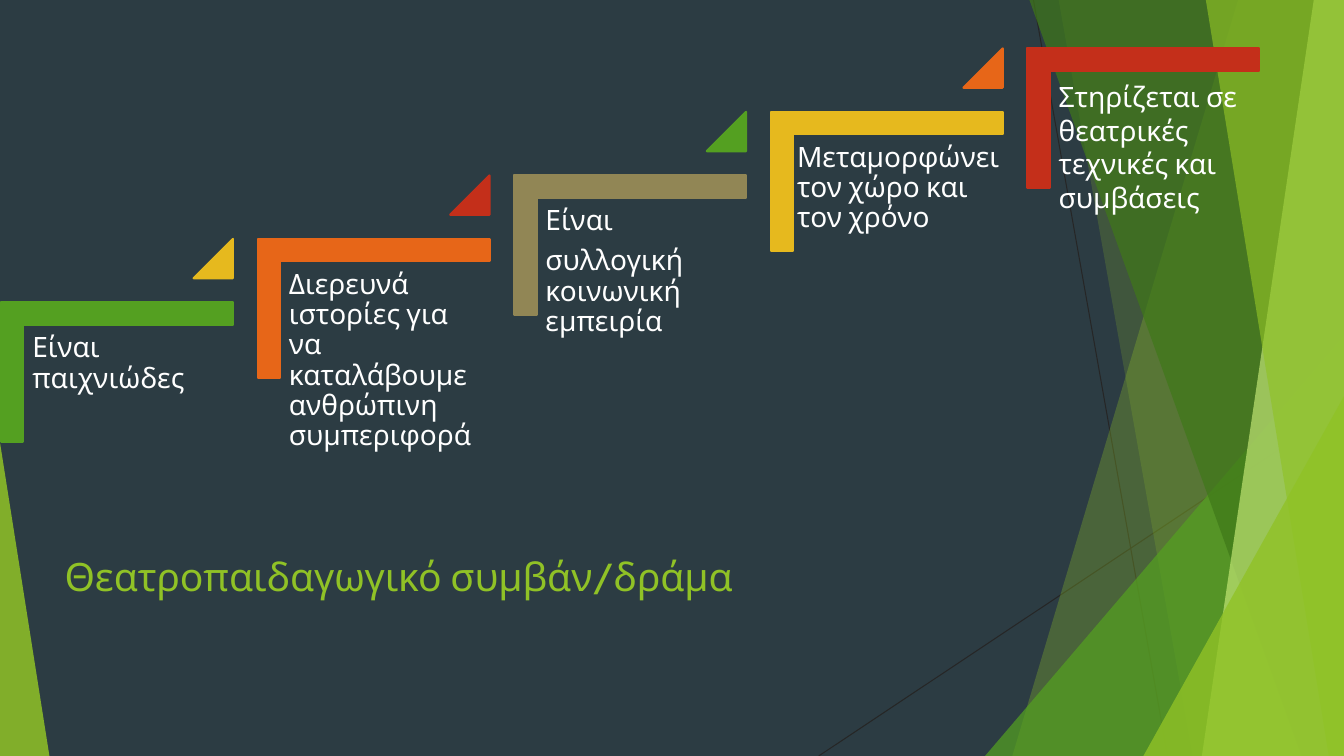
from lxml import etree
from pptx import Presentation
from pptx.dml.color import RGBColor
from pptx.enum.shapes import MSO_CONNECTOR, MSO_SHAPE
from pptx.enum.text import MSO_ANCHOR, PP_ALIGN
from pptx.oxml.ns import qn
from pptx.util import Inches, Pt

LINE = MSO_CONNECTOR.STRAIGHT
CORNER, TRIANGLE = MSO_SHAPE.CORNER, MSO_SHAPE.ISOSCELES_TRIANGLE
TOP, MIDDLE = MSO_ANCHOR.TOP, MSO_ANCHOR.MIDDLE
LEFT = PP_ALIGN.LEFT
FONT = "Cabin"
WIDE, HIGH = 13.33, 7.5
LIME, GREEN = "90C226", "54A021"

RAYS = [((10.25, 0), (11.58, HIGH)), ((WIDE, 4.03), (8.12, HIGH))]
BANDS = [
    (12.28, 10.04, LIME, 30),
    (10.5, 11.83, LIME, 20),
    (10.21, 12.91, "3F7819", 70),
    (13.03, 11.92, "C0E474", 70),
    (11.96, 13.18, LIME, 65),
]
PEAKS = [
    ((9.77, 3.33, 3.56, 4.17), 1, GREEN, 72),
    ((11.34, 3.93, 1.99, 3.57), 1, LIME, 80),
    ((0, 4.39, 0.49, 3.11), 0, LIME, 85),
]
STEPS = [
    (["Είναι παιχνιώδες"], GREEN, "E6B91E", 0, 0.9),
    (["Διερευνά ιστορίες για να καταλάβουμε ανθρώπινη συμπεριφορά"],
     "E76618", "C42F1A", 0, 0.9),
    (["Είναι", "συλλογική κοινωνική εμπειρία"], "918655", GREEN, 0, 0.9),
    (["Μεταμορφώνει τον χώρο και τον χρόνο"], "E6B91E", "E76618", 0.05, 0.9),
    (["Στηρίζεται σε θεατρικές τεχνικές και συμβάσεις"],
     "C42F1A", None, 0, 1.0),
]


def color(code):
    """Return the colour for a hex string."""
    return RGBColor.from_string(code)


def apply(item, values):
    """Set attributes from a dict of format values."""
    for name, value in values.items():
        setattr(item, name, value)


def paint(shape, code, alpha=100, edge=0):
    """Give a shape a flat fill and an optional line of the same colour."""
    shape.shadow.inherit = False
    shape.fill.solid()
    shape.fill.fore_color.rgb = color(code)
    if alpha < 100:
        tone = shape.fill._xPr.find(qn("a:solidFill"))[0]
        etree.SubElement(tone, qn("a:alpha")).set("val", str(alpha * 1000))
    if edge:
        shape.line.color.rgb = color(code)
        shape.line.width = Pt(edge)
    else:
        shape.line.fill.background()


def write(frame, lines, size, code, para, **form):
    """Write paragraphs in one style into a text frame."""
    apply(frame, {"word_wrap": True, **form})
    frame.text = "\n".join(lines)
    for part in frame.paragraphs:
        apply(part, {"alignment": LEFT, **para})
        apply(part.font, {"name": FONT, "size": Pt(size)})
        part.font.color.rgb = color(code)


def add_ray(slide, start, end):
    """Draw one thin dark line."""
    ray = slide.shapes.add_connector(
        LINE, *(Inches(v) for v in (*start, *end)))
    ray.line.color.rgb = color("262626")
    ray.line.width = Pt(0.75)
    etree.SubElement(ray._element.spPr, qn("a:effectLst"))


def add_band(slide, top, base, code, alpha):
    """Draw a band from a slanted edge to the right side of the slide."""
    pen = slide.shapes.build_freeform(Inches(top), 0)
    ends = [(WIDE, 0), (WIDE, HIGH), (base, HIGH)]
    pen.add_line_segments([(Inches(x), Inches(y)) for x, y in ends])
    paint(pen.convert_to_shape(), code, alpha)


def add_peak(slide, box, tip, code, alpha=100, edge=0):
    """Draw a triangle whose tip lies at a share of its width."""
    peak = slide.shapes.add_shape(TRIANGLE, *(Inches(v) for v in box))
    peak.adjustments[0] = tip
    paint(peak, code, alpha, edge)


def add_decor(slide):
    """Draw the lines and translucent facets at the slide edges."""
    for ray in RAYS:
        add_ray(slide, *ray)
    for band in BANDS[:2]:
        add_band(slide, *band)
    add_peak(slide, *PEAKS[0])
    for band in BANDS[2:]:
        add_band(slide, *band)
    for peak in PEAKS[1:]:
        add_peak(slide, *peak)


def add_step(slide, box, lines, code, mark, grow, pitch):
    """Draw one stair step with its text and the marker to the next."""
    left, top, wide, high = box
    turn = (wide - high) / 2
    stair = slide.shapes.add_shape(
        CORNER, Inches(left + turn), Inches(top - turn),
        Inches(high), Inches(wide))
    stair.rotation = 90
    for i in range(2):
        stair.adjustments[i] = 0.161
    paint(stair, code, edge=1.5)
    note = slide.shapes.add_textbox(
        Inches(left + 0.23 - grow), Inches(top + 0.23),
        Inches(2.08 + 2 * grow), Inches(1.82))
    sides = ("left", "top", "right", "bottom")
    pads = {f"margin_{side}": Inches(0.08) for side in sides}
    para = {"line_spacing": pitch, "space_after": Pt(7)}
    write(note.text_frame, lines, 20, "FFFFFF", para,
          vertical_anchor=TOP, **pads)
    if mark:
        add_peak(slide, (left + 1.91, top - 0.63, 0.39, 0.39), 1, mark,
                 edge=1.5)


def add_stairs(slide, box):
    """Place the steps rising evenly from lower left to upper right."""
    left, top, wide, high = box
    step_w, step_h = 2.3, 1.38
    run = (wide - step_w) / (len(STEPS) - 1)
    rise = (high - step_h) / (len(STEPS) - 1)
    for i, (lines, code, mark, grow, pitch) in enumerate(STEPS):
        place = (left + i * run, top + high - step_h - i * rise,
                 step_w, step_h)
        add_step(slide, place, lines, code, mark, grow, pitch)


def add_title(slide, box):
    """Move and format the title placeholder."""
    title = slide.shapes.title
    names = ("left", "top", "width", "height")
    apply(title, dict(zip(names, (Inches(v) for v in box))))
    write(title.text_frame, ["Θεατροπαιδαγωγικό συμβάν/δράμα"], 27.9, LIME,
          {}, vertical_anchor=MIDDLE)


def main():
    """Build and save the slide."""
    deck = Presentation()
    apply(deck, {"slide_width": Inches(WIDE), "slide_height": Inches(HIGH)})
    slide = deck.slides.add_slide(deck.slide_layouts[5])
    back = slide.background.fill
    back.solid()
    back.fore_color.rgb = color("2C3C43")
    add_decor(slide)
    add_title(slide, (0.54, 5.2, 9, 1.02))
    add_stairs(slide, (0.01, 0.48, 12.48, 3.9))
    deck.save("out.pptx")


if __name__ == "__main__":
    main()
